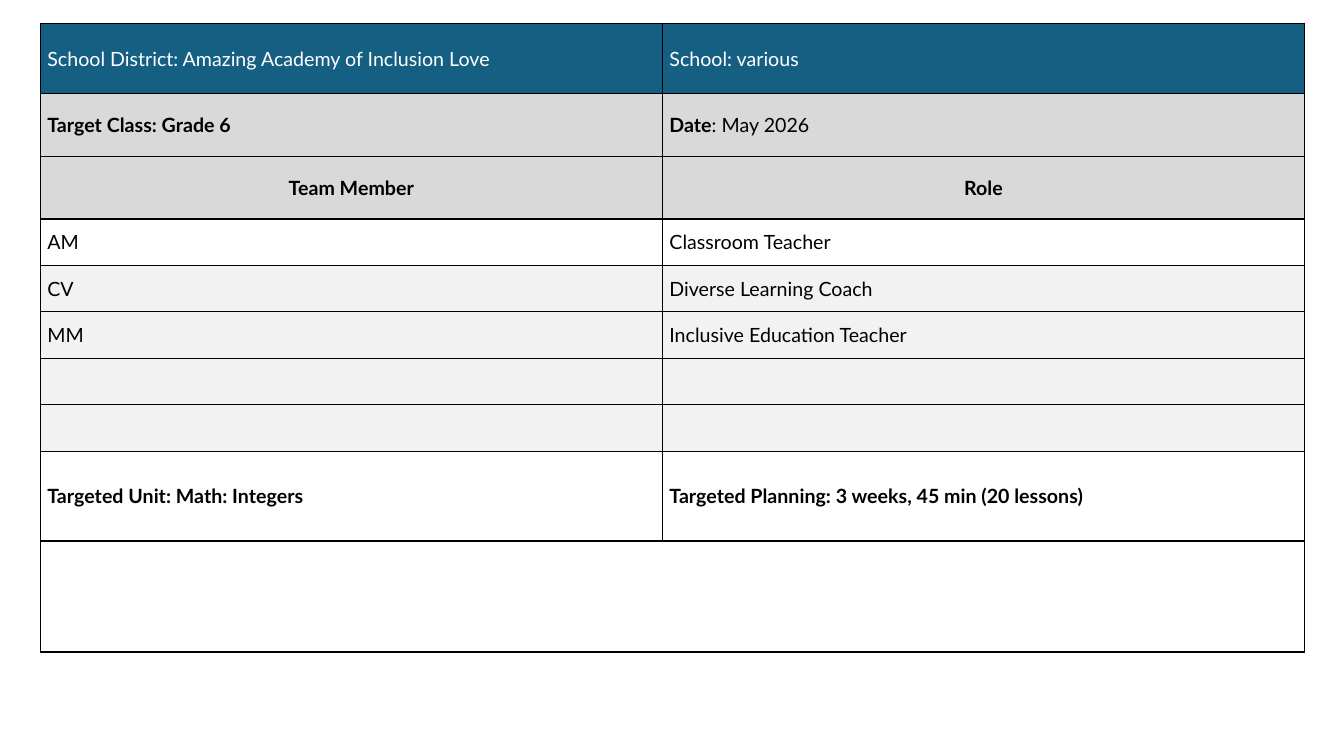
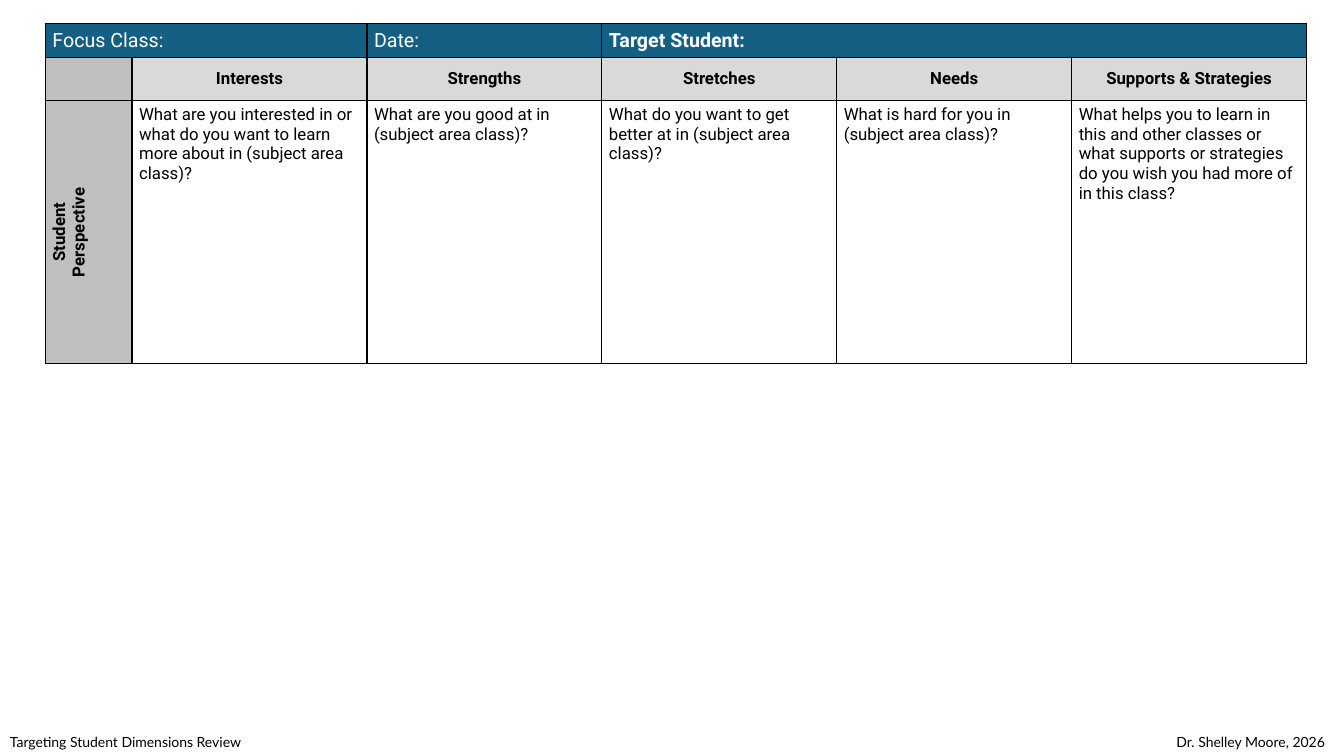
from dataclasses import dataclass, replace

from lxml import etree
from pptx import Presentation
from pptx import util as u
from pptx.dml.color import RGBColor
from pptx.enum import text
from pptx.oxml.ns import qn

BLACK = RGBColor(0, 0, 0)
WHITE = RGBColor(255, 255, 255)
BLUE = RGBColor(0x15, 0x60, 0x82)
PALE = RGBColor(0xF2, 0xF2, 0xF2)
LIGHT = RGBColor(0xD9, 0xD9, 0xD9)
MID = RGBColor(0xBF, 0xBF, 0xBF)

SLIDE_W, SLIDE_H = 13.33, 7.5
TABLE_TOP = 0.23
BODY_FONT, REVIEW_FONT = "Lato", "Roboto"


@dataclass(frozen=True)
class Style:
    font: str = BODY_FONT
    size: int = 14
    fill: RGBColor = WHITE
    color: RGBColor = BLACK
    bold: bool = False
    centred: bool = False
    top: bool = False
    vertical: bool = False


BANNER = Style(fill=BLUE, color=WHITE)
LABEL = Style(fill=LIGHT, bold=True)
HEADING = replace(LABEL, centred=True)
PLAIN = Style()
SHADED = Style(fill=PALE)
STRONG = Style(bold=True)


def format_run(r, style):
    r.font.name = style.font
    r.font.size = u.Pt(style.size)
    r.font.bold = style.bold
    r.font.color.rgb = style.color


def add_borders(cell):
    tc_pr = cell._tc.get_or_add_tcPr()
    for side in ("lnL", "lnR", "lnT", "lnB"):
        line = etree.SubElement(tc_pr, qn(f"a:{side}"), w=str(u.Pt(1)))
        fill = etree.SubElement(line, qn("a:solidFill"))
        etree.SubElement(fill, qn("a:srgbClr"), val=str(BLACK))


def fill_cell(cell, words, style):
    add_borders(cell)
    cell.fill.solid()
    cell.fill.fore_color.rgb = style.fill
    cell.margin_left = cell.margin_right = u.Inches(0.07)
    cell.margin_top = cell.margin_bottom = u.Inches(0.04)
    anchor = text.MSO_ANCHOR
    cell.vertical_anchor = anchor.TOP if style.top else anchor.MIDDLE
    if style.vertical:
        cell._tc.get_or_add_tcPr().set("vert", "vert270")
    cell.text_frame.text = words
    for p in cell.text_frame.paragraphs:
        p.font.size = u.Pt(style.size)
        if style.centred:
            p.alignment = text.PP_ALIGN.CENTER
        for r in p.runs:
            format_run(r, style)


def add_grid(slide, box, cols, heights, rows, spans=()):
    sp = slide.shapes.add_table(len(rows), len(cols), *map(u.Inches, box))
    table = sp.table
    table.first_row = table.horz_banding = False
    for column, share in zip(table.columns, cols):
        column.width = u.Inches(box[2] * share / sum(cols))
    for row, share in zip(table.rows, heights):
        row.height = u.Inches(box[3] * share / sum(heights))
    for i, row in enumerate(rows):
        for j, (words, style) in enumerate(row):
            fill_cell(table.cell(i, j), words, style)
    for i, first, last in spans:
        table.cell(i, first).merge(table.cell(i, last))
    return table


def add_footer(slide, box, words):
    sp = slide.shapes.add_textbox(*map(u.Inches, box))
    tf = sp.text_frame
    tf.word_wrap = True
    tf.text = words
    format_run(tf.paragraphs[0].runs[0], Style(size=10))


def team_slide(slide, box):
    lines = [
        (BANNER, 0.7, "School District: Amazing Academy of Inclusion Love", "School: various"),
        (LABEL, 0.62, "Target Class: Grade 6", "Date"),
        (HEADING, 0.62, "Team Member", "Role"),
        (PLAIN, 0.46, "AM", "Classroom Teacher"),
        (SHADED, 0.46, "CV", "Diverse Learning Coach"),
        (SHADED, 0.46, "MM", "Inclusive Education Teacher"),
        (SHADED, 0.46, "", ""),
        (SHADED, 0.46, "", ""),
        (STRONG, 0.89, "Targeted Unit: Math: Integers",
         "Targeted Planning: 3 weeks, 45 min (20 lessons)"),
        (PLAIN, 1.1, "", ""),
    ]
    rows = [[(words, style) for words in pair] for style, _, *pair in lines]
    heights = [line[1] for line in lines]
    table = add_grid(slide, box, (6.17, 6.37), heights, rows, [(9, 0, 1)])
    r = table.cell(1, 1).text_frame.paragraphs[0].add_run()
    r.text = ": May 2026"
    format_run(r, PLAIN)


def review_slide(slide, box):
    banner = replace(BANNER, font=REVIEW_FONT)
    heading = replace(HEADING, font=REVIEW_FONT, size=12)
    side = replace(heading, fill=MID, vertical=True)
    prompt = Style(font=REVIEW_FONT, size=12, top=True)
    topics = [
        ("Interests", "What are you interested in or what do you want to learn "
                      "more about in (subject area class)?"),
        ("Strengths", "What are you good at in (subject area class)?"),
        ("Stretches", "What do you want to get better at in (subject area class)?"),
        ("Needs", "What is hard for you in (subject area class)?"),
        ("Supports & Strategies", "What helps you to learn in this and other classes or "
                                  "what supports or strategies do you wish you had more "
                                  "of in this class?"),
    ]
    rows = [
        [("Focus Class:", banner), ("", banner), ("Date:", banner),
         ("Target Student:", replace(banner, bold=True)), ("", banner), ("", banner)],
        [("", side)] + [(name, heading) for name, _ in topics],
        [("Student\nPerspective", side)] + [(question, prompt) for _, question in topics],
    ]
    cols = [0.86] + [2.33] * len(topics)
    add_grid(slide, box, cols, (0.34, 0.43, 2.61), rows, [(0, 0, 1), (0, 3, 5)])
    height = 0.27
    top = SLIDE_H - height
    add_footer(slide, (0, top, 3.28, height), "Targeting Student Dimensions Review")
    add_footer(slide, (SLIDE_W - 1.76, top, 1.76, height), "Dr. Shelley Moore, 2026")


def main():
    prs = Presentation()
    prs.slide_width, prs.slide_height = u.Inches(SLIDE_W), u.Inches(SLIDE_H)
    pages = [
        (team_slide, (0.4, TABLE_TOP, 12.54, 6.24)),
        (review_slide, (0.45, TABLE_TOP, 12.51, 3.38)),
    ]
    for build, box in pages:
        build(prs.slides.add_slide(prs.slide_layouts[6]), box)
    prs.save("out.pptx")


if __name__ == "__main__":
    main()
